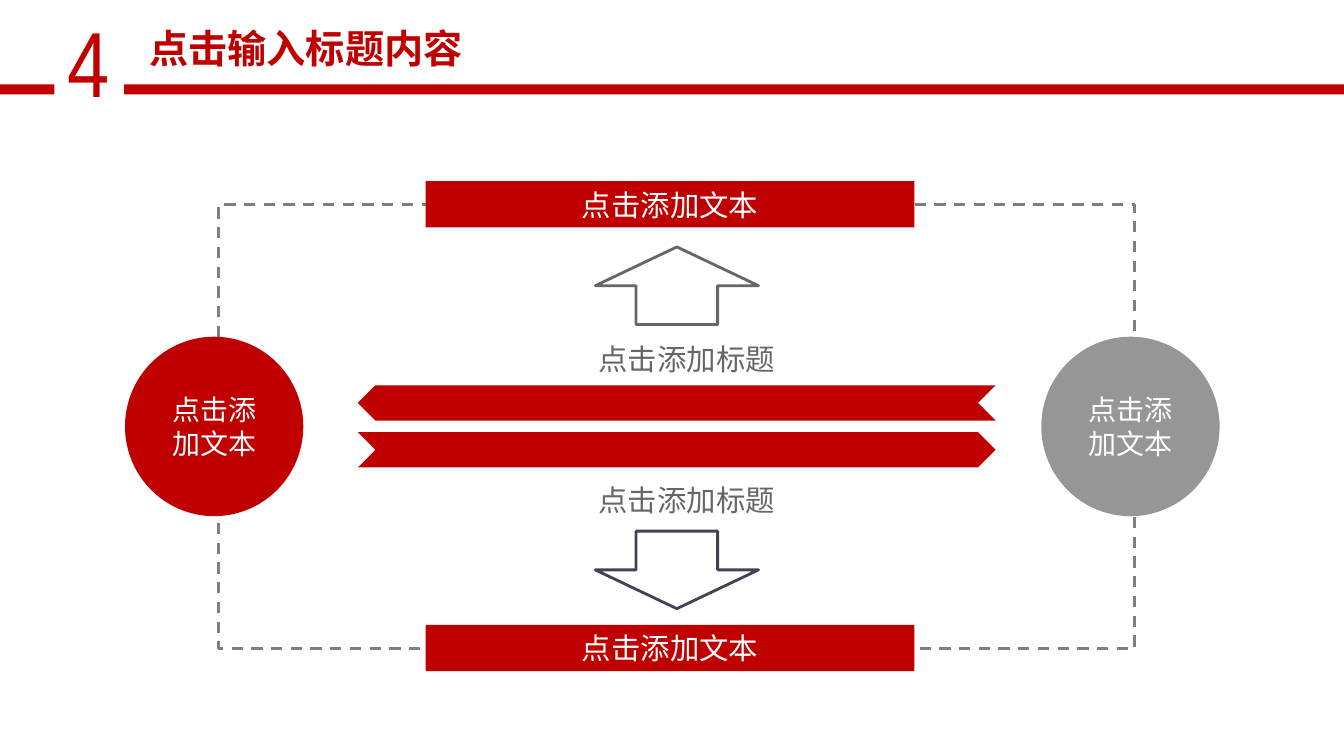
from pptx import Presentation
from pptx.dml.color import RGBColor
from pptx.enum.dml import MSO_LINE
from pptx.enum.shapes import MSO_SHAPE
from pptx.enum.text import MSO_ANCHOR, MSO_AUTO_SIZE, PP_ALIGN
from pptx.oxml.ns import qn
from pptx.util import Pt

COLORS = {
    "red": "C00000",
    "grey": "969696",
    "frame": "7F7F7F",
    "label": "666666",
    "navy": "414455",
    "white": "FFFFFF",
}
CJK = "Noto Sans CJK SC"
ADD_TEXT = "点击添加文本"
ADD_TITLE = "点击添加标题"


def rgb(color):
    return RGBColor.from_string(COLORS[color])


def write(frame, text, size, color, name=CJK, bold=False, align=PP_ALIGN.CENTER,
          anchor=MSO_ANCHOR.MIDDLE, wrap=True):
    frame_format = {"word_wrap": wrap, "auto_size": MSO_AUTO_SIZE.NONE, "vertical_anchor": anchor}
    for attribute, value in frame_format.items():
        setattr(frame, attribute, value)
    paragraph = frame.paragraphs[0]
    paragraph.alignment = align
    run = paragraph.add_run()
    run.text = text
    for attribute, value in {"name": name, "size": Pt(size), "bold": bold}.items():
        setattr(run.font, attribute, value)
    run.font.color.rgb = rgb(color)
    # East Asian characters take their typeface from a:ea
    properties = run.font._element
    east_asian = properties.makeelement(qn("a:ea"), {"typeface": name})
    properties.find(qn("a:latin")).addnext(east_asian)


def paint(shape, fill=None, line=None, dash=None):
    shape.shadow.inherit = False
    if fill:
        shape.fill.solid()
        shape.fill.fore_color.rgb = rgb(fill)
    else:
        shape.fill.background()
    if line:
        shape.line.color.rgb = rgb(line)
        shape.line.width = Pt(2)
        shape.line.dash_style = dash
    else:
        shape.line.fill.background()


def add_shape(slide, preset, box, **look):
    shape = slide.shapes.add_shape(preset, *map(Pt, box))
    paint(shape, **look)
    return shape


def add_caption(slide, box, text, size, color, **style):
    caption = slide.shapes.add_textbox(*map(Pt, box))
    write(caption.text_frame, text, size, color, align=PP_ALIGN.LEFT,
          anchor=MSO_ANCHOR.TOP, wrap=False, **style)


def add_ribbon(slide, tail, tip, top, height=25.2):
    """Draw a notched ribbon pointing from x = tail to x = tip."""
    notch = height / 2 if tip > tail else -height / 2
    middle, bottom = top + height / 2, top + height
    outline = [(tip - notch, top), (tip, middle), (tip - notch, bottom),
               (tail, bottom), (tail + notch, middle)]
    builder = slide.shapes.build_freeform(Pt(tail), Pt(top))
    builder.add_line_segments([(Pt(x), Pt(y)) for x, y in outline], close=True)
    paint(builder.convert_to_shape(), fill="red")


def add_header(slide, number, heading):
    add_caption(slide, (41, 0, 24.5, 87), number, 66, "red", name="Arial Narrow")
    for left, width in ((88.6, 871.8), (-2, 41)):
        add_shape(slide, MSO_SHAPE.RECTANGLE, (left, 60.2, width, 7.2), fill="red")
    title = slide.shapes.title
    box = {"left": 89.3, "top": 13.7, "width": 258.5, "height": 41}
    for attribute, value in box.items():
        setattr(title, attribute, Pt(value))
    write(title.text_frame, heading, 28, "red", bold=True, anchor=MSO_ANCHOR.TOP)


def main():
    deck = Presentation()
    deck.slide_width, deck.slide_height = Pt(960), Pt(540)
    slide = deck.slides.add_slide(deck.slide_layouts[5])
    add_header(slide, "4", "点击输入标题内容")

    add_shape(slide, MSO_SHAPE.RECTANGLE, (156.2, 146.2, 654.5, 316.8),
              line="frame", dash=MSO_LINE.DASH)
    for left, fill in ((89.3, "red"), (743.8, "grey")):
        circle = add_shape(slide, MSO_SHAPE.OVAL, (left, 240.5, 127.4, 128.2), fill=fill)
        write(circle.text_frame, ADD_TEXT, 20, "white")

    for top in (239.8, 340.6):
        add_caption(slide, (420.5, top, 143.3, 33.1), ADD_TITLE, 21, "label")
    for preset, top, line in ((MSO_SHAPE.UP_ARROW, 176.4, "label"),
                              (MSO_SHAPE.DOWN_ARROW, 379.4, "navy")):
        add_shape(slide, preset, (425.2, top, 116.6, 55.4), line=line)
    for top in (129.4, 446.4):
        banner = add_shape(slide, MSO_SHAPE.RECTANGLE, (304, top, 349.2, 33.1), fill="red")
        write(banner.text_frame, ADD_TEXT, 21, "white")

    ribbon_left, ribbon_right = 255.6, 711.2
    add_ribbon(slide, ribbon_left, ribbon_right, 308.7)
    add_ribbon(slide, ribbon_right, ribbon_left, 275.2)
    deck.save("out.pptx")


if __name__ == "__main__":
    main()
